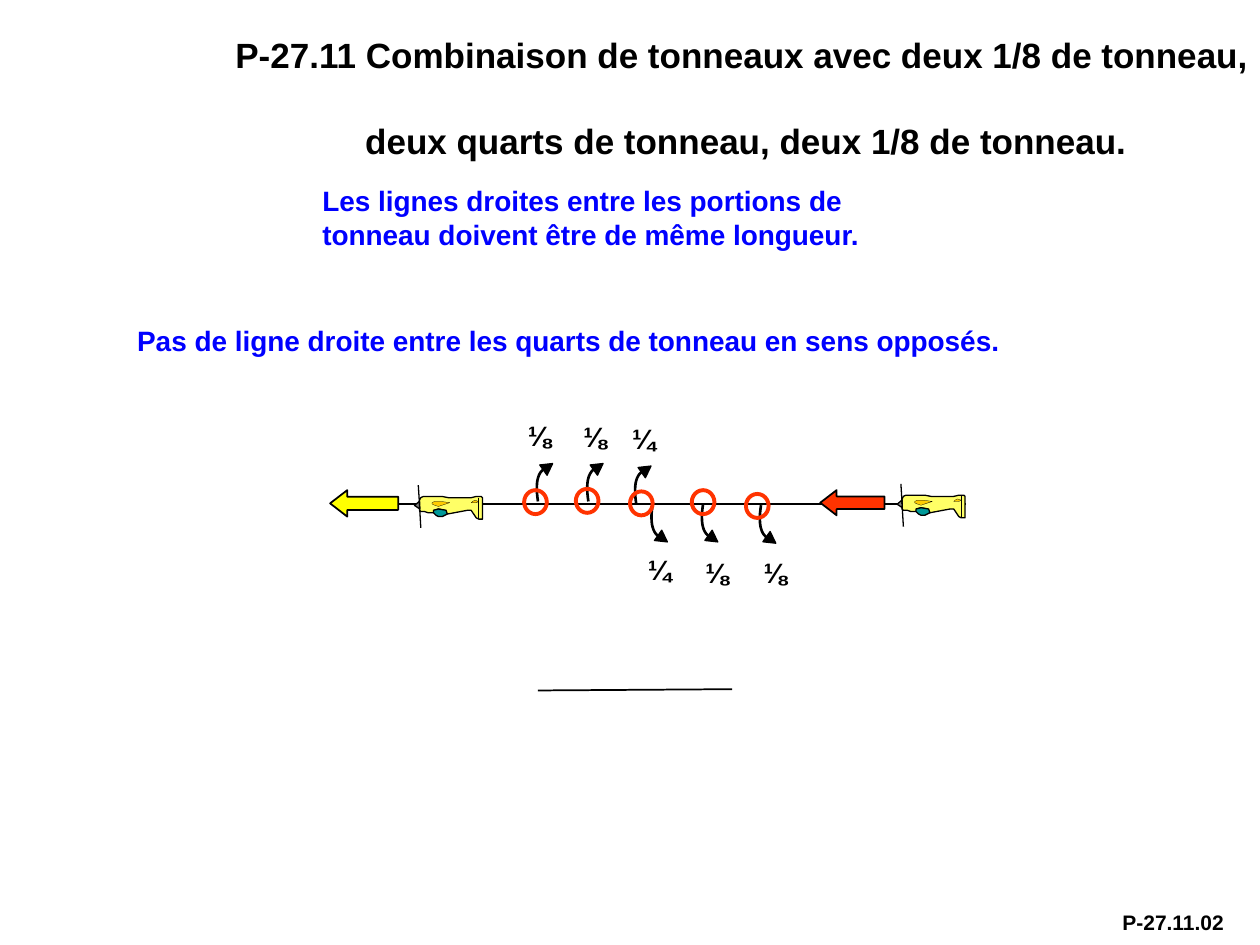
from lxml import etree
from pptx import Presentation
from pptx.dml.color import RGBColor
from pptx.enum.shapes import MSO_CONNECTOR, MSO_SHAPE
from pptx.enum.text import PP_ALIGN
from pptx.oxml.ns import qn
from pptx.util import Pt

OVAL = MSO_SHAPE.OVAL
ARROW = MSO_SHAPE.LEFT_ARROW
TIP = MSO_SHAPE.ISOSCELES_TRIANGLE
LINE = MSO_CONNECTOR.STRAIGHT
LEFT, MID = PP_ALIGN.LEFT, PP_ALIGN.CENTER

deck = Presentation()
unit = 9144
deck.slide_width, deck.slide_height = 1000 * unit, 750 * unit
shapes = deck.slides.add_slide(deck.slide_layouts[6]).shapes


def paint(shape, line, width, fill=None):
    shape.line.color.rgb = RGBColor.from_string(line)
    shape.line.width = Pt(width)
    if fill == "none":
        shape.fill.background()
    elif fill:
        shape.fill.solid()
        shape.fill.fore_color.rgb = RGBColor.from_string(fill)
    etree.SubElement(shape._element.spPr, qn("a:effectLst"))


def write(text, box, size=16, color="000000", align=LEFT, gap=0, indent=0):
    frame = shapes.add_textbox(*[n * unit for n in box]).text_frame
    frame.word_wrap = True
    for i, row in enumerate(text.split("\n")):
        para = frame.paragraphs[0] if i == 0 else frame.add_paragraph()
        para.text = row
        para.alignment = align
        if i:
            para.space_before = Pt(gap)
            para._p.get_or_add_pPr().set("marL", str(indent * unit))
        para.font.name = "Arial"
        para.font.size = Pt(size)
        para.font.bold = True
        para.font.color.rgb = RGBColor.from_string(color)


write("P-27.11 Combinaison de tonneaux avec deux 1/8 de tonneau,\n"
      "deux quarts de tonneau, deux 1/8 de tonneau.",
      (177, 22, 827, 76), size=20, gap=25, indent=103)
write("P-27.11.02", (881, 717, 103, 30), size=12)
write("Les lignes droites entre les portions de tonneau doivent être "
      "de même longueur.", (246, 141, 454, 64), color="0000FF")
write("Pas de ligne droite entre les quarts de tonneau en sens opposés.",
      (99, 252, 779, 37), color="0000FF")

for ends in [(427, 548, 581, 547), (293, 400, 767, 400)]:
    paint(shapes.add_connector(LINE, *[n * unit for n in ends]), "000000", 1)

for box, fill in [((651, 389, 51, 20), "FF3300"), ((262, 389, 54, 21), "FFFF00")]:
    arrow = shapes.add_shape(ARROW, *[n * unit for n in box])
    arrow.adjustments[1] = 0.65
    paint(arrow, "000000", 1, fill)

parts = [
    ("FFFF66", 0.75, [(11, 14), (7, 14), (4, 13), (1, 13), (0, 12), (0, 4), (1, 2),
                      (3, 1), (18, 1), (23, 2), (41, 2), (45, 1), (49, 1), (50, 2),
                      (50, 19), (47, 19), (45, 18), (41, 12), (38, 12), (22, 15),
                      (20, 12), (15, 11), (12, 12)]),
    ("009999", 0.75, [(22, 15), (21, 12), (15, 11), (11, 12), (11, 14), (13, 16),
                      (15, 17), (18, 17)]),
    ("FFCC00", 0.13, [(24, 6), (18, 8), (15, 9), (12, 8), (10, 7), (10, 6), (12, 5),
                      (17, 5)]),
    ("FFCC00", 0.13, [(47, 5), (44, 4), (42, 5), (41, 6), (45, 6)]),
]
struts = [(-1, -8, 0, 8), (0, 9, 1, 26), (47, 2, 47, 19)]
for left, top in [(716, 392), (333, 393)]:
    for fill, width, points in parts:
        spots = [((left + x) * unit, (top + y) * unit) for x, y in points]
        form = shapes.build_freeform(*spots[0])
        form.add_line_segments(spots[1:])
        paint(form.convert_to_shape(), "000000", width, fill)
    nose = shapes.add_shape(TIP, (left - 5) * unit, (top + 6) * unit, 6 * unit, 4 * unit)
    nose.rotation = 267
    paint(nose, "000000", 0.75, "808080")
    for x, y, far, low in struts:
        strut = shapes.add_connector(LINE, (left + x) * unit, (top + y) * unit,
                                     (left + far) * unit, (top + low) * unit)
        paint(strut, "000000", 0.75)

turns = [(427, 398, -1), (467, 398, -1), (505, 400, -1),
         (518, 400, 1), (558, 400, 1), (604, 401, 1)]
steps = 12
for left, top, way in turns:
    curve = []
    for i in range(steps + 1):
        t = i / steps
        a, b, c = 3 * t * (1 - t) ** 2, 3 * t * t * (1 - t), t ** 3
        x = left - 2 * a - b + 5 * c
        y = top + way * (13 * a + 22 * b + 26 * c)
        curve.append((x * unit, y * unit))
    form = shapes.build_freeform(*curve[0])
    form.add_line_segments(curve[1:], close=False)
    paint(form.convert_to_shape(), "000000", 1.5, "none")
    tip = shapes.add_shape(TIP, (left + 3) * unit, (top + way * 27.5 - 4.5) * unit,
                           10 * unit, 9 * unit)
    tip.rotation = 90 + way * 35.5
    paint(tip, "000000", 0.75, "000000")

for text, left, top, width in [("⅛", 408, 327, 40), ("⅛", 450, 328, 44),
                               ("¼ ", 489, 330, 44), ("¼ ", 501, 434, 51),
                               ("⅛", 546, 436, 46), ("⅛", 596, 436, 38)]:
    write(text, (left, top, width, 37), align=MID)

for left, top in [(416, 389), (457, 388), (500, 390), (549, 389), (592, 392)]:
    ring = shapes.add_shape(OVAL, left * unit, top * unit, 18 * unit, 19 * unit)
    paint(ring, "FF3300", 2.25, "none")

deck.save("out.pptx")
